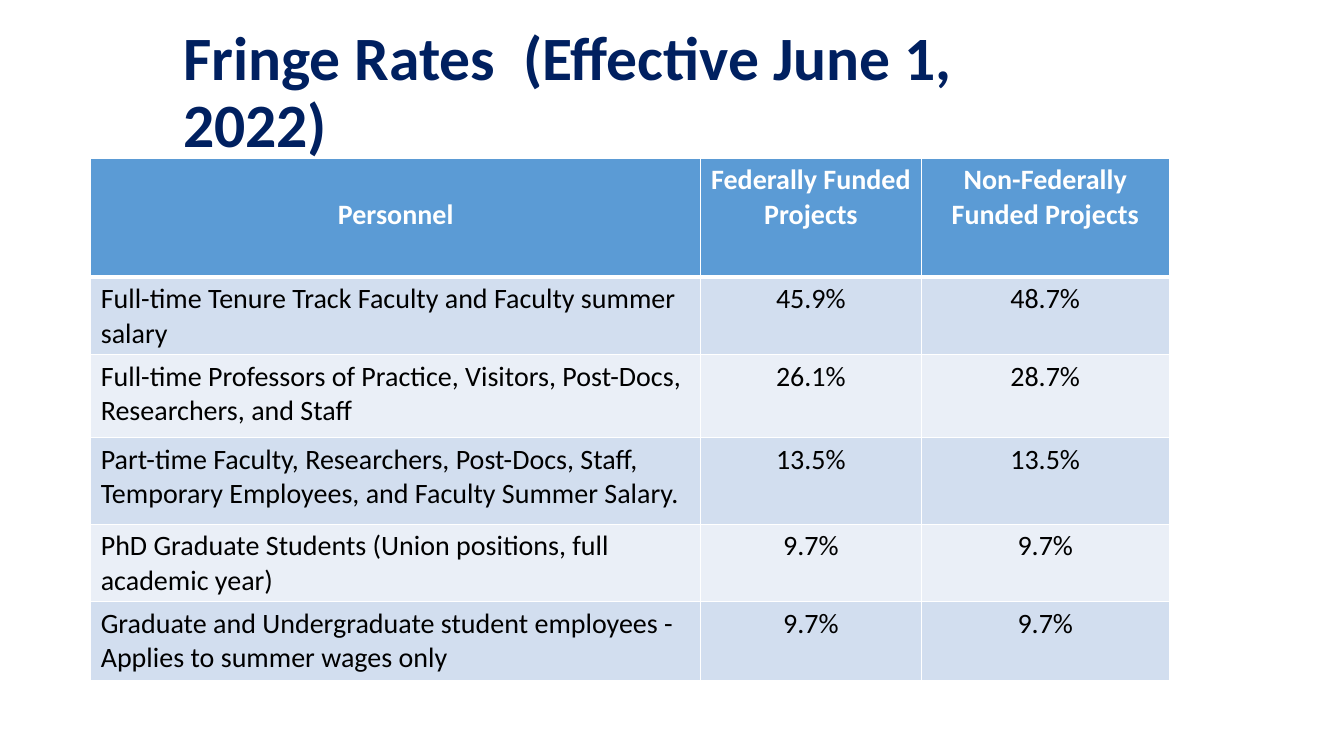
from lxml import etree
from pptx import Presentation
from pptx.dml.color import RGBColor
from pptx.enum import text as t
from pptx.oxml.ns import qn
from pptx.util import Pt

TITLE = "Fringe Rates  (Effective June 1, 2022)"
HEAD = ("Personnel", "Federally Funded Projects", "Non-Federally Funded Projects")
RATES = [
    ("Full-time Tenure Track Faculty and Faculty summer salary", "45.9%", "48.7%"),
    ("Full-time Professors of Practice, Visitors, Post-Docs, Researchers, and Staff",
     "26.1%", "28.7%"),
    ("Part-time Faculty, Researchers, Post-Docs, Staff, Temporary Employees, "
     "and Faculty Summer Salary.", "13.5%", "13.5%"),
    ("PhD Graduate Students (Union positions, full academic year)", "9.7%", "9.7%"),
    ("Graduate and Undergraduate student employees - Applies to summer wages only",
     "9.7%", "9.7%"),
]
WIDTHS = (435.6, 157.7, 177.1)
HEIGHTS = (85, 55.5, 59, 62, 55.5, 56.5)
COLORS = {"title": "002060", "head": "5B9BD5", "odd": "D2DEEF",
          "even": "EAEFF7", "white": "FFFFFF", "black": "000000"}
FONT = "Calibri"


def write(frame, words, size, color, bold=False, align=t.PP_ALIGN.LEFT):
    para = frame.paragraphs[0]
    para.alignment = align
    run = para.add_run()
    run.text = words
    font = run.font
    font.name, font.size, font.bold = FONT, Pt(size), bold
    font.color.rgb = RGBColor.from_string(COLORS[color])
    return para


def edge(cell, low):
    """Draw white borders, with the bottom one low points wide."""
    props = cell._tc.get_or_add_tcPr()
    for side, width in (("L", 1), ("R", 1), ("T", 1), ("B", low)):
        line = etree.SubElement(props, qn(f"a:ln{side}"), w=str(Pt(width)))
        fill = etree.SubElement(line, qn("a:solidFill"))
        etree.SubElement(fill, qn("a:srgbClr"), val=COLORS["white"])


def add_title(slide):
    frame = slide.shapes.add_textbox(Pt(123.8), Pt(13.7), Pt(668.2), Pt(107.3)).text_frame
    frame.word_wrap = True
    frame.vertical_anchor = t.MSO_ANCHOR.MIDDLE
    write(frame, TITLE, 44, "title", True).line_spacing = 0.9


def add_rates(slide):
    rows = [HEAD] + RATES
    table = slide.shapes.add_table(len(rows), len(HEAD), Pt(64.8), Pt(113),
                                   Pt(sum(WIDTHS)), Pt(sum(HEIGHTS))).table
    for col, width in zip(table.columns, WIDTHS):
        col.width = Pt(width)
    for i, (row, height) in enumerate(zip(rows, HEIGHTS)):
        table.rows[i].height = Pt(height)
        head = i == 0
        shade = "head" if head else "odd" if i % 2 else "even"
        for j, words in enumerate(row):
            cell = table.cell(i, j)
            edge(cell, 3 if head else 1 )
            cell.fill.solid()
            cell.fill.fore_color.rgb = RGBColor.from_string(COLORS[shade])
            if head and j == 0:
                cell.margin_top = Pt(28)
            align = t.PP_ALIGN.CENTER if head or j else t.PP_ALIGN.LEFT
            write(cell.text_frame, words, 20, "white" if head else "black", head, align)


def main():
    deck = Presentation()
    deck.slide_width, deck.slide_height = Pt(960), Pt(540)
    slide = deck.slides.add_slide(deck.slide_layouts[6])
    add_title(slide)
    add_rates(slide)
    deck.save("out.pptx")


if __name__ == "__main__":
    main()
